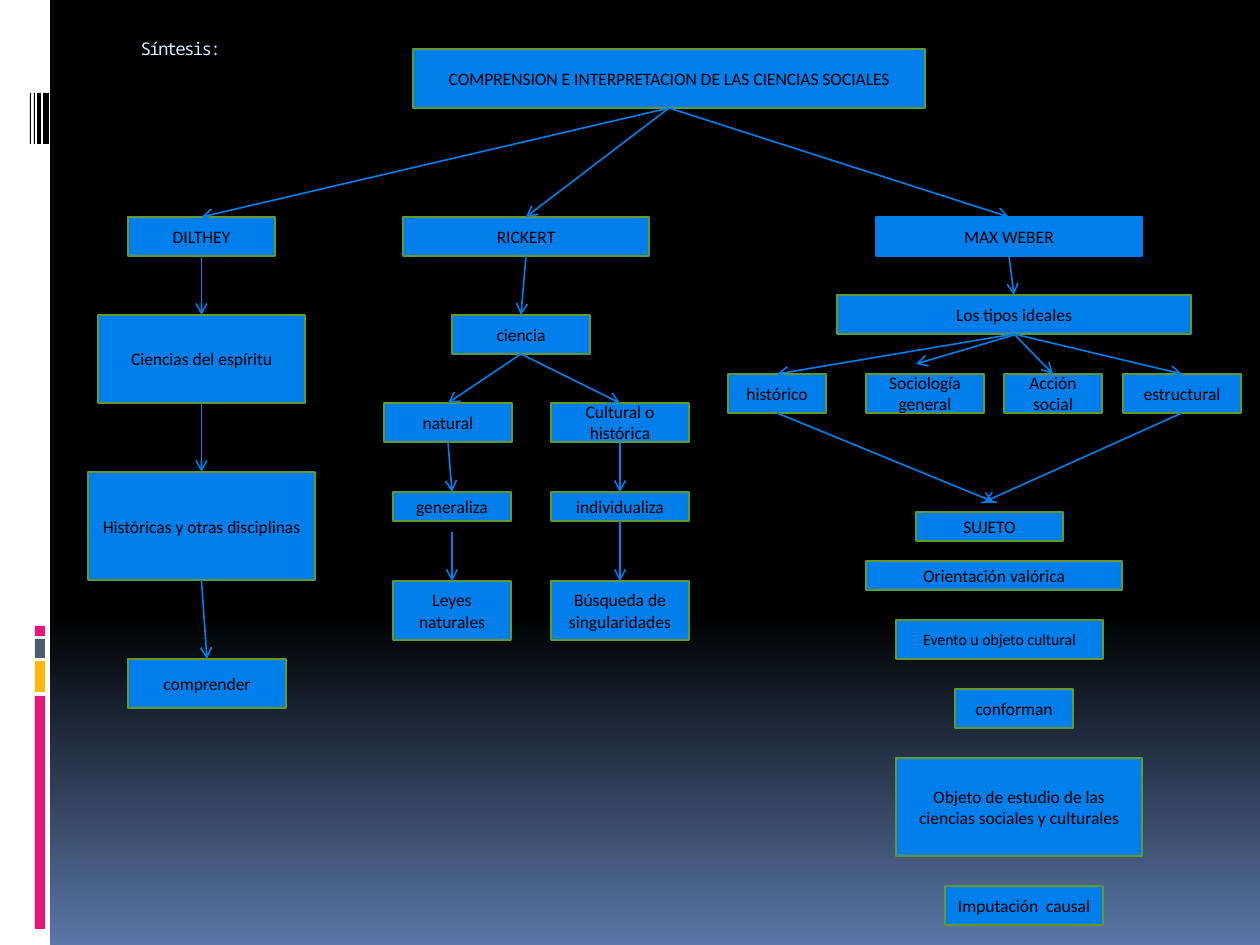
from pptx import Presentation
from pptx import util as u
from pptx.dml import color
from pptx.enum import shapes, text
from pptx.oxml import parse_xml
from pptx.oxml import ns

PX = u.Inches(1) / 126
WHITE = color.RGBColor(0xFF, 0xFF, 0xFF)
BLACK = color.RGBColor(0x00, 0x00, 0x00)
BLUE = color.RGBColor(0x00, 0x7E, 0xEB)
GREEN = color.RGBColor(0x5E, 0x9B, 0x2C)
PINK = color.RGBColor(0xEA, 0x15, 0x7A)
YELLOW = color.RGBColor(0xFE, 0xB8, 0x0A)
SLATE = color.RGBColor(0x4E, 0x5B, 0x6F)
DUSK = color.RGBColor(0x5B, 0x77, 0xA8)
PALE = color.RGBColor(0xD6, 0xEC, 0xFF)


def add_rect(box, fill):
    sp = s.shapes.add_shape(shapes.MSO_SHAPE.RECTANGLE, *[round(v * PX) for v in box])
    sp.shadow.inherit = False
    sp.fill.solid()
    sp.fill.fore_color.rgb = fill
    sp.line.fill.background()
    return sp


def add_arrow(x1, y1, x2, y2):
    ends = [round(v * PX) for v in (x1, y1, x2, y2)]
    c = s.shapes.add_connector(shapes.MSO_CONNECTOR.STRAIGHT, *ends)
    c.line.color.rgb = BLUE
    c.line.width = u.Pt(0.94)
    ln = c.line._get_or_add_ln()
    ln.append(parse_xml(f'<a:tailEnd {ns.nsdecls("a")} type="arrow"/>'))
    c._element.spPr.append(parse_xml(f'<a:effectLst {ns.nsdecls("a")}/>'))
    return c


prs = Presentation()
prs.slide_width = round(1260 * PX)
prs.slide_height = round(945 * PX)
s = prs.slides.add_slide(prs.slide_layouts[5])

bg = s.background.fill
bg.gradient()
bg.gradient_angle = 270
for stop, position, rgb in zip(bg.gradient_stops, (0.65, 1), (BLACK, DUSK)):
    stop.position = position
    stop.color.rgb = rgb

strips = [
    ((0, 0, 50, 945), WHITE),
    ((35, 696, 10, 233), PINK),
    ((35, 661, 10, 31), YELLOW),
    ((35, 639, 10, 19), SLATE),
    ((35, 626, 10, 10), PINK),
    ((43, 93, 6, 51), BLACK),
    ((37, 93, 4, 51), BLACK),
    ((34, 93, 1, 51), BLACK),
    ((30, 93, 1, 51), BLACK),
]
for box, fill in strips:
    add_rect(box, fill)

title = s.shapes.title
place = {"left": 128, "top": 29, "width": 1071, "height": 39}
for name, value in place.items():
    setattr(title, name, round(value * PX))
tf = title.text_frame
tf.text = "Síntesis:"
frame_format = {
    "auto_size": text.MSO_AUTO_SIZE.NONE,
    "vertical_anchor": text.MSO_ANCHOR.MIDDLE,
    "word_wrap": True,
}
for name, value in frame_format.items():
    setattr(tf, name, value)
p = tf.paragraphs[0]
p.alignment = text.PP_ALIGN.LEFT
r = p.runs[0]
for name, value in {"name": "Noto Sans Mono", "size": u.Pt(10)}.items():
    setattr(r.font, name, value)
r.font.color.rgb = PALE
r._r.get_or_add_rPr().set("spc", "-100")

boxes = {
    "COMPRENSION E INTERPRETACION DE LAS CIENCIAS SOCIALES": (413, 49, 512, 59),
    "DILTHEY": (128, 217, 147, 39),
    "Ciencias del espíritu": (98, 315, 207, 88),
    "Históricas y otras disciplinas": (88, 472, 227, 108),
    "comprender": (128, 659, 158, 49),
    "RICKERT": (403, 217, 246, 39),
    "ciencia": (452, 315, 138, 39),
    "natural": (384, 403, 128, 39),
    "Cultural o histórica": (551, 403, 138, 39),
    "generaliza": (393, 492, 118, 29),
    "individualiza": (551, 492, 138, 29),
    "Leyes naturales": (393, 581, 118, 59),
    "Búsqueda de singularidades": (551, 581, 138, 59),
    "MAX WEBER": (876, 217, 266, 39),
    "Los tipos ideales": (837, 295, 354, 39),
    "histórico": (728, 374, 98, 39),
    "Sociología general": (866, 374, 118, 39),
    "Acción social": (1004, 374, 98, 39),
    "estructural": (1123, 374, 118, 39),
    "SUJETO": (916, 512, 147, 29),
    "Orientación valórica": (866, 561, 256, 29),
    "Evento u objeto cultural": (896, 620, 207, 39),
    "conforman": (955, 689, 118, 39),
    "Objeto de estudio de las ciencias sociales y culturales": (896, 758, 246, 98),
    "Imputación  causal": (945, 886, 158, 39),
}
nodes = {}
for label, box in boxes.items():
    sp = nodes[label] = add_rect(box, BLUE)
    sp.line.color.rgb = BLUE if label == "MAX WEBER" else GREEN
    sp.line.width = u.Pt(1.5)
    tf = sp.text_frame
    for name, value in frame_format.items():
        setattr(tf, name, value)
    tf.margin_left = tf.margin_right = round(8 * PX)
    p = tf.paragraphs[0]
    p.alignment = text.PP_ALIGN.CENTER
    r = p.add_run()
    r.text = label
    size = 9 if label.startswith("Evento") else 10
    for name, value in {"name": "Calibri", "size": u.Pt(size)}.items():
        setattr(r.font, name, value)
    r.font.color.rgb = BLACK

root = "COMPRENSION E INTERPRETACION DE LAS CIENCIAS SOCIALES"
children = {
    root: ["DILTHEY", "RICKERT", "MAX WEBER"],
    "DILTHEY": ["Ciencias del espíritu"],
    "Ciencias del espíritu": ["Históricas y otras disciplinas"],
    "Históricas y otras disciplinas": ["comprender"],
    "RICKERT": ["ciencia"],
    "ciencia": ["natural", "Cultural o histórica"],
    "natural": ["generaliza"],
    "Cultural o histórica": ["individualiza"],
    "individualiza": ["Búsqueda de singularidades"],
    "MAX WEBER": ["Los tipos ideales"],
    "Los tipos ideales": ["histórico", "Acción social", "estructural"],
}
for parent, kids in children.items():
    for kid in kids:
        c = add_arrow(0, 0, 0, 0)
        c.begin_connect(nodes[parent], 2)
        c.end_connect(nodes[kid], 0)

loose_arrows = [
    (452, 532, 452, 581),
    (1014, 335, 916, 364),
    (777, 413, 994, 502),
    (1182, 413, 984, 502),
]
for ends in loose_arrows:
    add_arrow(*ends)

prs.save("out.pptx")
